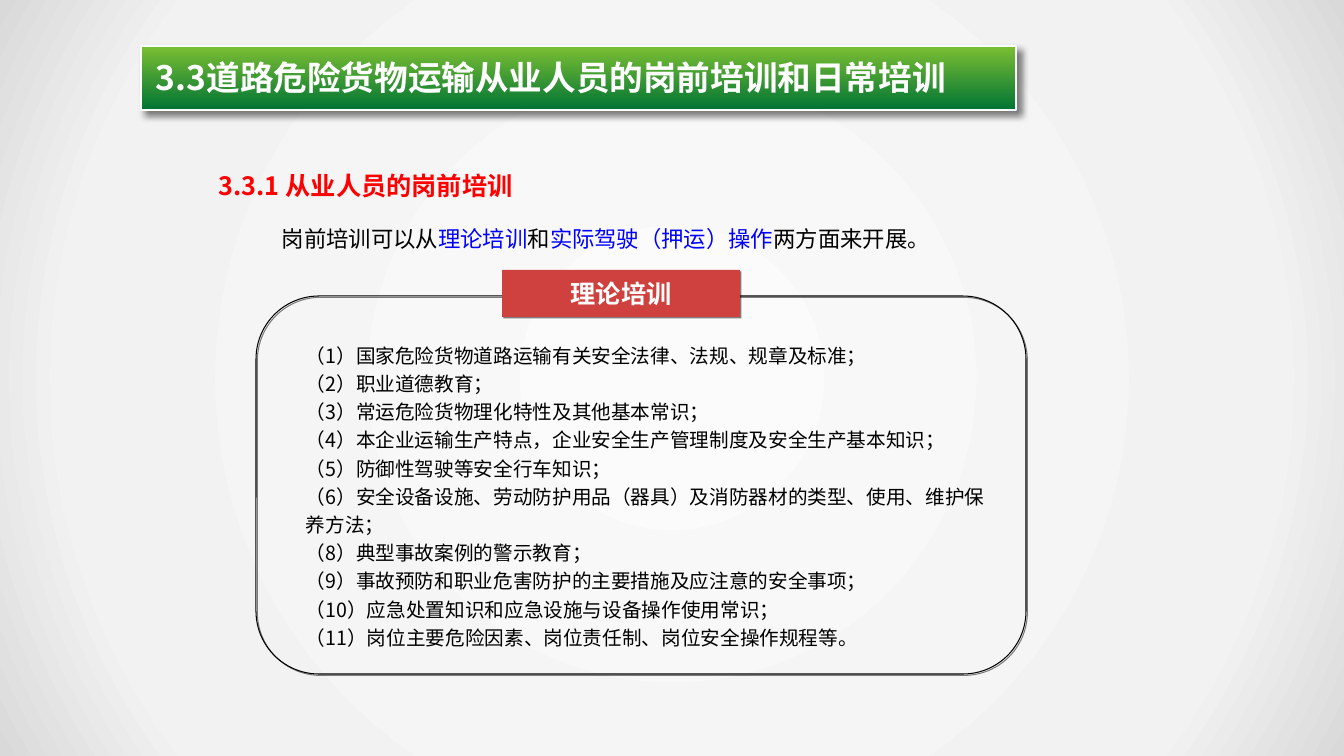
from lxml import etree
from pptx import Presentation
from pptx import util as u
from pptx.dml.color import RGBColor
from pptx.enum import shapes, text
from pptx.oxml import parse_xml
from pptx.oxml.ns import nsdecls, qn

# Content
FONT = "Noto Sans CJK SC"
BLACK, WHITE, RED, BLUE = "000000", "FFFFFF", "FF0000", "0000FF"
TITLE = "3.3道路危险货物运输从业人员的岗前培训和日常培训"
SUBTITLE = "3.3.1 从业人员的岗前培训"
INTRO = [
    ("岗前培训可以从", BLACK),
    ("理论培训", BLUE),
    ("和", BLACK),
    ("实际驾驶（押运）操作", BLUE),
    ("两方面来开展。", BLACK),
]
TAG = "理论培训"
TOPICS = [
    "（1）国家危险货物道路运输有关安全法律、法规、规章及标准；",
    "（2）职业道德教育；",
    "（3）常运危险货物理化特性及其他基本常识；",
    "（4）本企业运输生产特点，企业安全生产管理制度及安全生产基本知识；",
    "（5）防御性驾驶等安全行车知识；",
    "（6）安全设备设施、劳动防护用品（器具）及消防器材的类型、使用、维护保养方法；",
    "（8）典型事故案例的警示教育；",
    "（9）事故预防和职业危害防护的主要措施及应注意的安全事项；",
    "（10）应急处置知识和应急设施与设备操作使用常识；",
    "（11）岗位主要危险因素、岗位责任制、岗位安全操作规程等。",
]

# Layout in px: left, top, width, height
SLIDE = (0, 0, 1344, 756)
TITLE_BAR = (141, 46, 875, 64)
TITLE_BOX = (146, 52, 821, 92)
SUBTITLE_BOX = (209, 158, 360, 48)
INTRO_BOX = (272, 207, 682, 50)
TOPICS_BOX = (296, 334, 699, 324)
FRAME = (256, 296, 770, 378)
TAG_BOX = (502, 270, 238, 47)

PAGE_STOPS = [(0, "FBFBFB"), (79, "F2F2F2"), (100, "D9D9D9")]
PAGE_SHADE = ('<a:path path="circle">'
              '<a:fillToRect l="50000" t="50000" r="50000" b="50000"/></a:path>')
BAR_STOPS = [(0, "7CBF33"), (100, "007434")]
BAR_SHADE = '<a:lin ang="5400000" scaled="0"/>'


def px(value):
    return u.Inches(value / 100.8)


def color(hex_value):
    return RGBColor.from_string(hex_value)


def add_box(kind, box, fill=None, line=None, line_width=0.75):
    shape = slide.shapes.add_shape(kind, *map(px, box))
    shape.shadow.inherit = False
    if fill:
        shape.fill.solid()
        shape.fill.fore_color.rgb = color(fill)
    else:
        shape.fill.background()
    if line:
        shape.line.color.rgb = color(line)
        shape.line.width = u.Pt(line_width)
    else:
        shape.line.fill.background()
    return shape


def set_gradient(shape, stops, shade):
    marks = "".join(f'<a:gs pos="{at * 1000}"><a:srgbClr val="{tone}"/></a:gs>'
                    for at, tone in stops)
    gradient = parse_xml(f'<a:gradFill {nsdecls("a")} rotWithShape="1">'
                         f'<a:gsLst>{marks}</a:gsLst>{shade}</a:gradFill>')
    properties = shape.element.spPr
    properties.replace(properties.find(qn("a:noFill")), gradient)


def set_shadow(shape, blur, distance):
    effects = shape.element.spPr.find(qn("a:effectLst"))
    effects.append(parse_xml(
        f'<a:outerShdw {nsdecls("a")} blurRad="{u.Pt(blur)}" dist="{u.Pt(distance)}" '
        'dir="2700000" algn="tl" rotWithShape="0"><a:srgbClr val="000000">'
        '<a:alpha val="50000"/></a:srgbClr></a:outerShdw>'))


def write(shape, paragraphs, size, tone=None, bold=False, spacing=1.0):
    """Each paragraph is a list of (words, colour) runs."""
    frame = shape.text_frame
    frame.word_wrap = True
    for index, runs in enumerate(paragraphs):
        paragraph = frame.add_paragraph() if index else frame.paragraphs[0]
        paragraph.line_spacing = spacing
        font = paragraph.font
        font.name, font.size, font.bold = FONT, u.Pt(size), bold
        if tone:
            font.color.rgb = color(tone)
        default = paragraph._p.pPr.find(qn("a:defRPr"))
        etree.SubElement(default, qn("a:ea")).set("typeface", FONT)
        for words, run_tone in runs:
            run = paragraph.add_run()
            run.text = words
            if run_tone:
                run.font.color.rgb = color(run_tone)
    return frame


def add_text(box, paragraphs, size, **style):
    return write(slide.shapes.add_textbox(*map(px, box)), paragraphs, size, **style)


presentation = Presentation()
presentation.slide_width, presentation.slide_height = px(SLIDE[2]), px(SLIDE[3])
slide = presentation.slides.add_slide(presentation.slide_layouts[6])
RECTANGLE = shapes.MSO_SHAPE.RECTANGLE

# Backdrop
set_gradient(add_box(RECTANGLE, SLIDE), PAGE_STOPS, PAGE_SHADE)

# Title bar
bar = add_box(RECTANGLE, TITLE_BAR, line="FEFFFF", line_width=1.5)
set_gradient(bar, BAR_STOPS, BAR_SHADE)
set_shadow(bar, 5, 4.2)
add_text(TITLE_BOX, [[(TITLE, None)]], 24, tone=WHITE, bold=True)

# Section heading and introduction
add_text(SUBTITLE_BOX, [[(SUBTITLE, None)]], 18, tone=RED, bold=True, spacing=1.25)
add_text(INTRO_BOX, [INTRO], 16, spacing=1.5)

# Topics in a rounded frame
add_text(TOPICS_BOX, [[(topic, None)] for topic in TOPICS], 14, tone=BLACK, spacing=1.2)
set_shadow(add_box(shapes.MSO_SHAPE.ROUNDED_RECTANGLE, FRAME, line=BLACK), 0, 1.4)

# Tag on the frame's top edge
tag = add_box(RECTANGLE, TAG_BOX, fill="CE413E")
set_shadow(tag, 0, 1.4)
tag_frame = write(tag, [[(TAG, None)]], 18, tone=WHITE, bold=True)
tag_frame.vertical_anchor = text.MSO_ANCHOR.MIDDLE
tag_frame.paragraphs[0].alignment = text.PP_ALIGN.CENTER

presentation.save("out.pptx")
